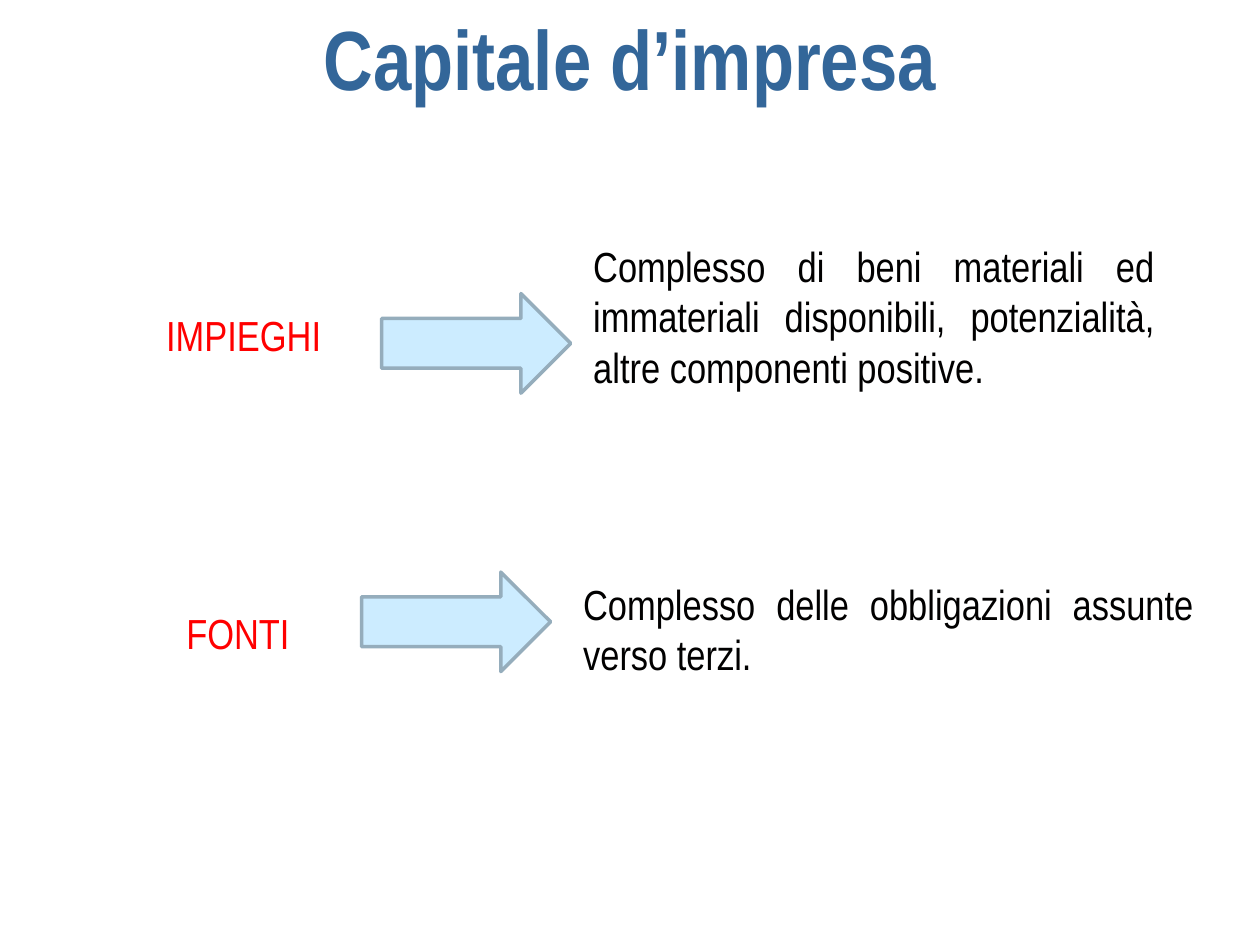
from pptx import Presentation
from pptx import util as u
from pptx.dml.color import RGBColor
from pptx.enum import shapes, text

BLUE = RGBColor(0x33, 0x66, 0x99)
RED = RGBColor(0xFF, 0x00, 0x00)
INK = RGBColor(0x01, 0x00, 0x00)
SKY = RGBColor(0xCC, 0xEC, 0xFF)
EDGE = RGBColor(0x95, 0xAD, 0xBC)
FONT = "Arial Narrow"
ARROW = (1.5, 0.79)

# Each row: label, its box, arrow corner, meaning, its box (inches)
ROWS = [
    ("IMPIEGHI", (1.22, 2.41, 1.81, 0.5), (3.03, 2.33),
     "Complesso di beni materiali ed immateriali disponibili, "
     "potenzialità, altre componenti positive.", (4.61, 1.86, 4.65, 1.7)),
    ("FONTI", (1.38, 4.77, 1.65, 0.5), (2.87, 4.54),
     "Complesso delle obbligazioni assunte verso terzi.",
     (4.53, 4.54, 5.04, 0.9)),
]


def inches(box):
    return [u.Inches(n) for n in box]


def write(shape, words, size, color, align, bold=False):
    frame = shape.text_frame
    frame.word_wrap = True
    frame.auto_size = text.MSO_AUTO_SIZE.NONE
    frame.vertical_anchor = text.MSO_ANCHOR.TOP
    para = frame.paragraphs[0]
    para.alignment = align
    run = para.add_run()
    run.text = words
    run.font.name = FONT
    run.font.size = u.Pt(size)
    run.font.bold = bold
    run.font.color.rgb = color


def add_title(slide, words, box):
    title = slide.shapes.title
    title.left, title.top, title.width, title.height = inches(box)
    write(title, words, 48, BLUE, text.PP_ALIGN.CENTER, True)


def add_text(slide, words, box, color, align):
    shape = slide.shapes.add_textbox(*inches(box))
    write(shape, words, 24, color, align)


def add_arrow(slide, corner):
    arrow = slide.shapes.add_shape(
        shapes.MSO_SHAPE.RIGHT_ARROW, *inches(corner + ARROW))
    arrow.shadow.inherit = False
    arrow.fill.solid()
    arrow.fill.fore_color.rgb = SKY
    arrow.line.color.rgb = EDGE
    arrow.line.width = u.Pt(2)


def main():
    deck = Presentation()
    deck.slide_width, deck.slide_height = inches((10, 7.5))
    slide = deck.slides.add_slide(deck.slide_layouts[5])

    add_title(slide, "Capitale d’impresa", (0, 0, 10, 0.9))

    # Label, arrow and meaning of each row
    for label, spot, corner, meaning, box in ROWS:
        add_text(slide, label, spot, RED, text.PP_ALIGN.LEFT)
        add_arrow(slide, corner)
        add_text(slide, meaning, box, INK, text.PP_ALIGN.JUSTIFY)

    deck.save("out.pptx")


if __name__ == "__main__":
    main()
